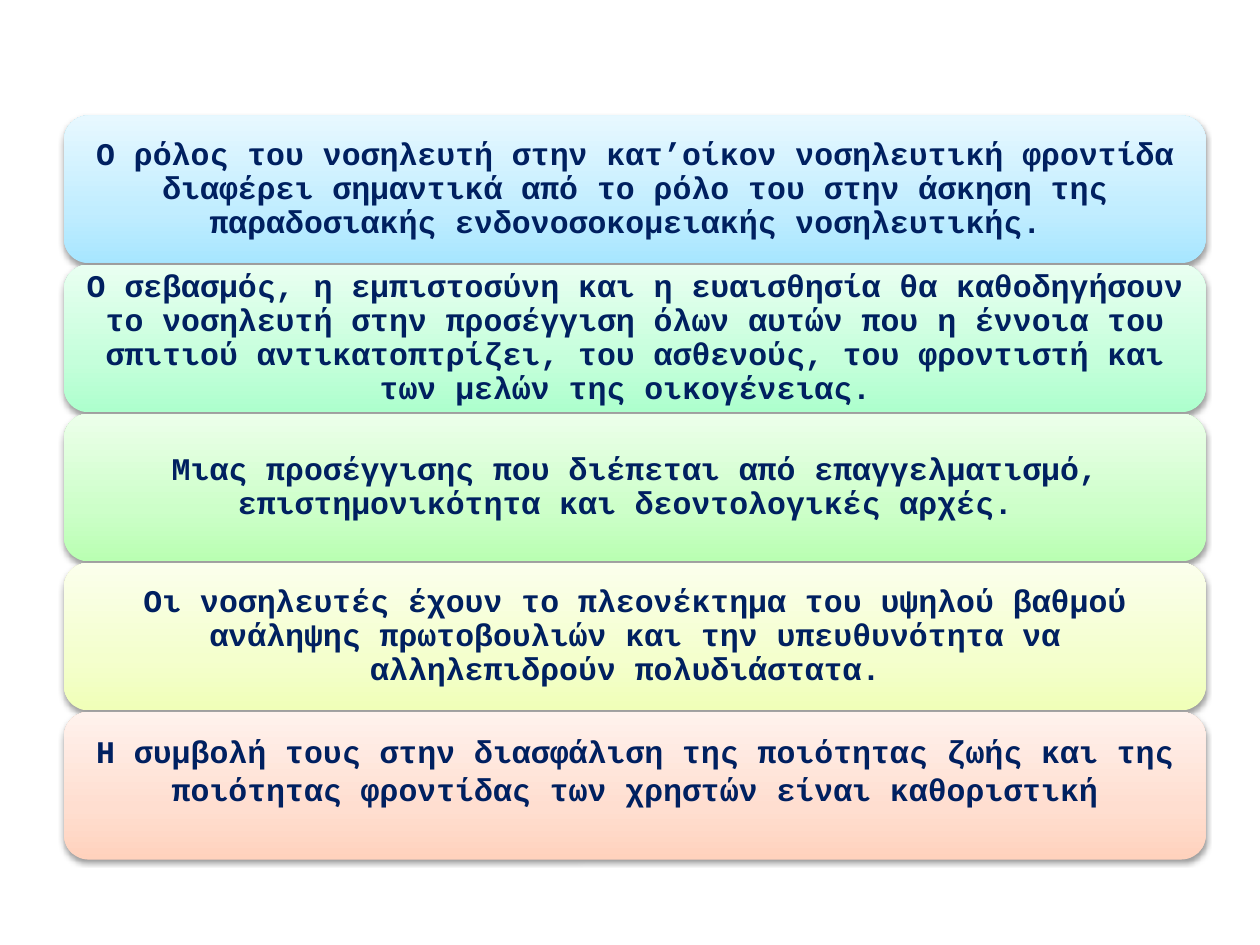
from copy import deepcopy
from dataclasses import dataclass

from lxml import etree
from pptx import Presentation
from pptx.dml.color import RGBColor
from pptx.enum import shapes, text
from pptx.oxml import ns
from pptx.util import Pt

NAVY = RGBColor(0x00, 0x20, 0x60)
FONT = "Courier New"
LEFT, TOP, WIDTH, HEIGHT = Pt(36.6), Pt(66), Pt(652.4), Pt(84.4)
PITCH = Pt(85.2)
INSET = Pt(5.2)
STOPS = (0, 0.35, 1)


@dataclass(frozen=True)
class Panel:
    words: str
    hues: tuple[RGBColor, RGBColor, RGBColor]
    lead: float = 0.9
    foot: int = INSET


def tones(*codes: str) -> tuple[RGBColor, ...]:
    return tuple(RGBColor.from_string(code) for code in codes)


PANELS = (
    Panel("Ο ρόλος του νοσηλευτή στην κατ’οίκον νοσηλευτική φροντίδα "
          "διαφέρει σημαντικά από το ρόλο του στην άσκηση της "
          "παραδοσιακής ενδονοσοκομειακής νοσηλευτικής. ",
          tones("A7E6FF", "C1EDFF", "E7F8FF")),
    Panel("Ο σεβασμός, η εμπιστοσύνη και η ευαισθησία θα καθοδηγήσουν "
          "το νοσηλευτή στην προσέγγιση όλων αυτών που η έννοια του "
          "σπιτιού αντικατοπτρίζει, του ασθενούς, του φροντιστή και "
          "των μελών της οικογένειας. ",
          tones("ADFFCD", "C5FFDB", "E9FFF1")),
    Panel("Μιας προσέγγισης που διέπεται από επαγγελματισμό, "
          "επιστημονικότητα και δεοντολογικές αρχές. ",
          tones("B9FFB2", "CDFFC9", "ECFFEA")),
    Panel("Οι νοσηλευτές έχουν το πλεονέκτημα του υψηλού βαθμού "
          "ανάληψης πρωτοβουλιών και την υπευθυνότητα να "
          "αλληλεπιδρούν πολυδιάστατα. ",
          tones("F0FFB8", "F4FFCD", "FBFFEC")),
    Panel("Η συμβολή τους στην διασφάλιση της ποιότητας ζωής και της "
          "ποιότητας φροντίδας των χρηστών είναι καθοριστική",
          tones("FFD2BD", "FFDED0", "FFF2ED"), lead=1.0, foot=Pt(23.5)),
)


def shade(shape, hues: tuple[RGBColor, ...]) -> None:
    """Fill with a three-stop gradient that starts at the bottom edge."""
    shape.fill.gradient()
    shape.fill.gradient_angle = 90
    stops = shape._element.spPr.find(".//" + ns.qn("a:gsLst"))
    stops.append(deepcopy(stops[0]))
    for stop, place, hue in zip(shape.fill.gradient_stops, STOPS, hues):
        stop.position = place
        stop.color.rgb = hue


def cast(shape) -> None:
    """Add a soft black shadow below the shape."""
    shape.shadow.inherit = False
    effects = shape._element.spPr.find(ns.qn("a:effectLst"))
    outer = etree.SubElement(
        effects, ns.qn("a:outerShdw"), blurRad=str(Pt(3.1)),
        dist=str(Pt(1.6)), dir="5400000", rotWithShape="0")
    black = etree.SubElement(outer, ns.qn("a:srgbClr"), val="000000")
    etree.SubElement(black, ns.qn("a:alpha"), val="38000")


def write(shape, panel: Panel) -> None:
    frame = shape.text_frame
    frame.word_wrap = True
    frame.vertical_anchor = text.MSO_ANCHOR.MIDDLE
    frame.margin_left = frame.margin_right = frame.margin_top = INSET
    frame.margin_bottom = panel.foot
    frame.text = panel.words
    para = frame.paragraphs[0]
    para.alignment = text.PP_ALIGN.CENTER
    para.line_spacing = panel.lead
    font = para.runs[0].font
    font.name, font.size, font.bold = FONT, Pt(18), True
    font.color.rgb = NAVY


def draw(slide, panel: Panel, row: int) -> None:
    shape = slide.shapes.add_shape(
        shapes.MSO_SHAPE.ROUNDED_RECTANGLE,
        LEFT, TOP + row * PITCH, WIDTH, HEIGHT)
    shade(shape, panel.hues)
    shape.line.fill.background()
    cast(shape)
    write(shape, panel)


def main() -> None:
    deck = Presentation()
    deck.slide_width, deck.slide_height = Pt(720), Pt(540)
    slide = deck.slides.add_slide(deck.slide_layouts[6])
    for row, panel in enumerate(PANELS):
        draw(slide, panel, row)
    deck.save("out.pptx")


if __name__ == "__main__":
    main()
